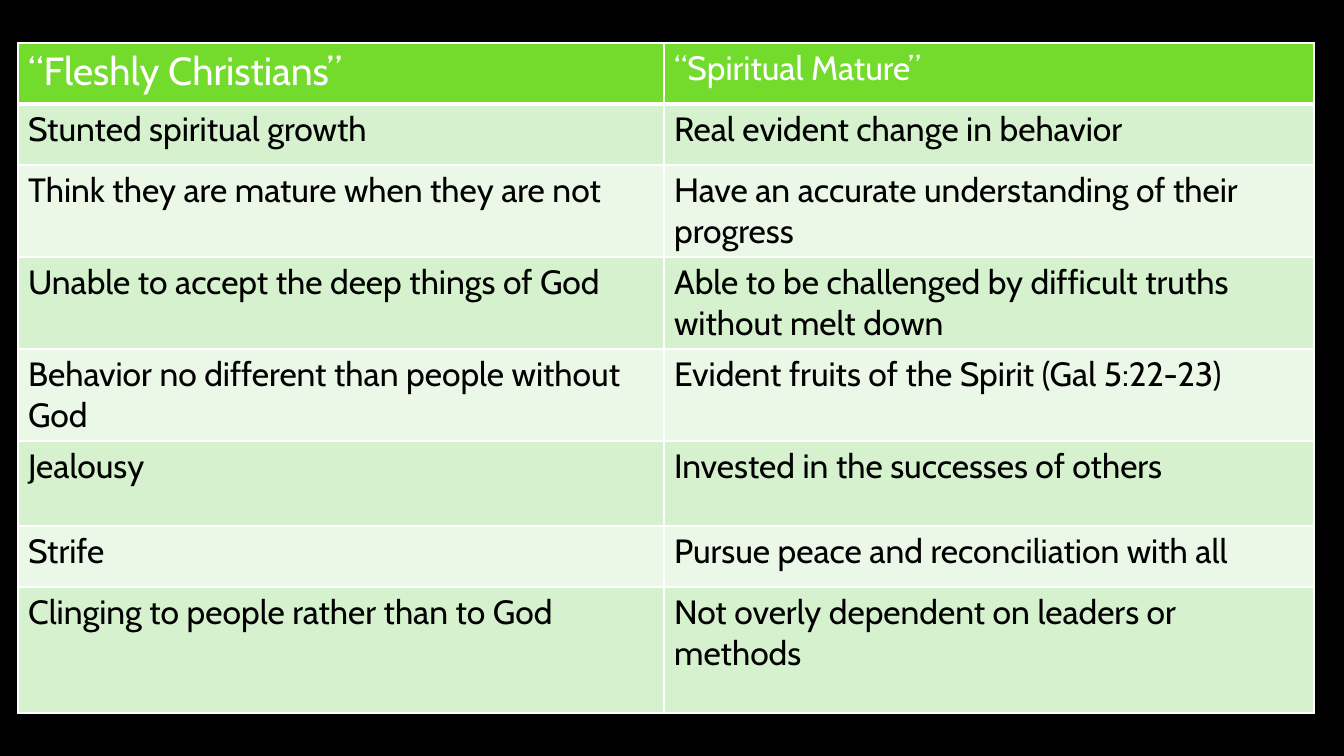
from lxml.etree import SubElement as Sub
from pptx import Presentation as Deck
from pptx.dml.color import RGBColor as Rgb
from pptx.oxml.ns import qn
from pptx.util import Emu, Pt

TRAITS = [
    ("“Fleshly Christians”", "“Spiritual Mature”"),
    ("Stunted spiritual growth", "Real evident change in behavior"),
    ("Think they are mature when they are not",
     "Have an accurate understanding of their progress"),
    ("Unable to accept the deep things of God",
     "Able to be challenged by difficult truths without melt down"),
    ("Behavior no different than people without God",
     "Evident fruits of the Spirit (Gal 5:22-23)"),
    ("Jealousy", "Invested in the successes of others"),
    ("Strife", "Pursue peace and reconciliation with all"),
    ("Clinging to people rather than to God",
     "Not overly dependent on leaders or methods"),
]
WIDTHS = [646, 650]
HEIGHTS = [61, 61, 92, 92, 92, 85, 61, 126]
LEFT, TOP = 18, 43
COLORS = {"back": "000000", "head": "72DB2B", "odd": "D5F1CD",
          "even": "EBF8E8", "line": "FFFFFF", "white": "FFFFFF",
          "text": "000000"}
SCALE = 12192000 / 1344


def px(n):
    return Emu(round(n * SCALE))


def color(name):
    return Rgb.from_string(COLORS[name])


def border(cell, sides):
    props = cell._tc.get_or_add_tcPr()
    for side, width in sides.items():
        line = Sub(props, qn(f"a:ln{side}"), w=str(Pt(width)))
        fill = Sub(line, qn("a:solidFill"))
        Sub(fill, qn("a:srgbClr"), val=COLORS["line"])


def style(cell, text, fill, ink, size, base):
    border(cell, {"L": 1, "R": 1, "T": 1, "B": base})
    cell.fill.solid()
    cell.fill.fore_color.rgb = color(fill)
    run = cell.text_frame.paragraphs[0].add_run()
    run.text = text
    for key, value in {"name": "Cabin", "size": Pt(size), "bold": False}.items():
        setattr(run.font, key, value)
    run.font.color.rgb = color(ink)


def main():
    deck = Deck()
    deck.slide_width, deck.slide_height = px(1344), px(756)
    slide = deck.slides.add_slide(deck.slide_layouts[6])
    slide.background.fill.solid()
    slide.background.fill.fore_color.rgb = color("back")

    table = slide.shapes.add_table(
        len(TRAITS), len(WIDTHS), px(LEFT), px(TOP),
        px(sum(WIDTHS)), px(sum(HEIGHTS))).table
    for col, width in zip(table.columns, WIDTHS):
        col.width = px(width)
    for row, height in zip(table.rows, HEIGHTS):
        row.height = px(height)

    for r, pair in enumerate(TRAITS):
        for c, text in enumerate(pair):
            if r == 0:
                look = ("head", "white", 24 if c else 28, 3)
            else:
                look = ("odd" if r % 2 else "even", "text", 24, 1)
            style(table.cell(r, c), text, *look)
    deck.save("out.pptx")


if __name__ == "__main__":
    main()
